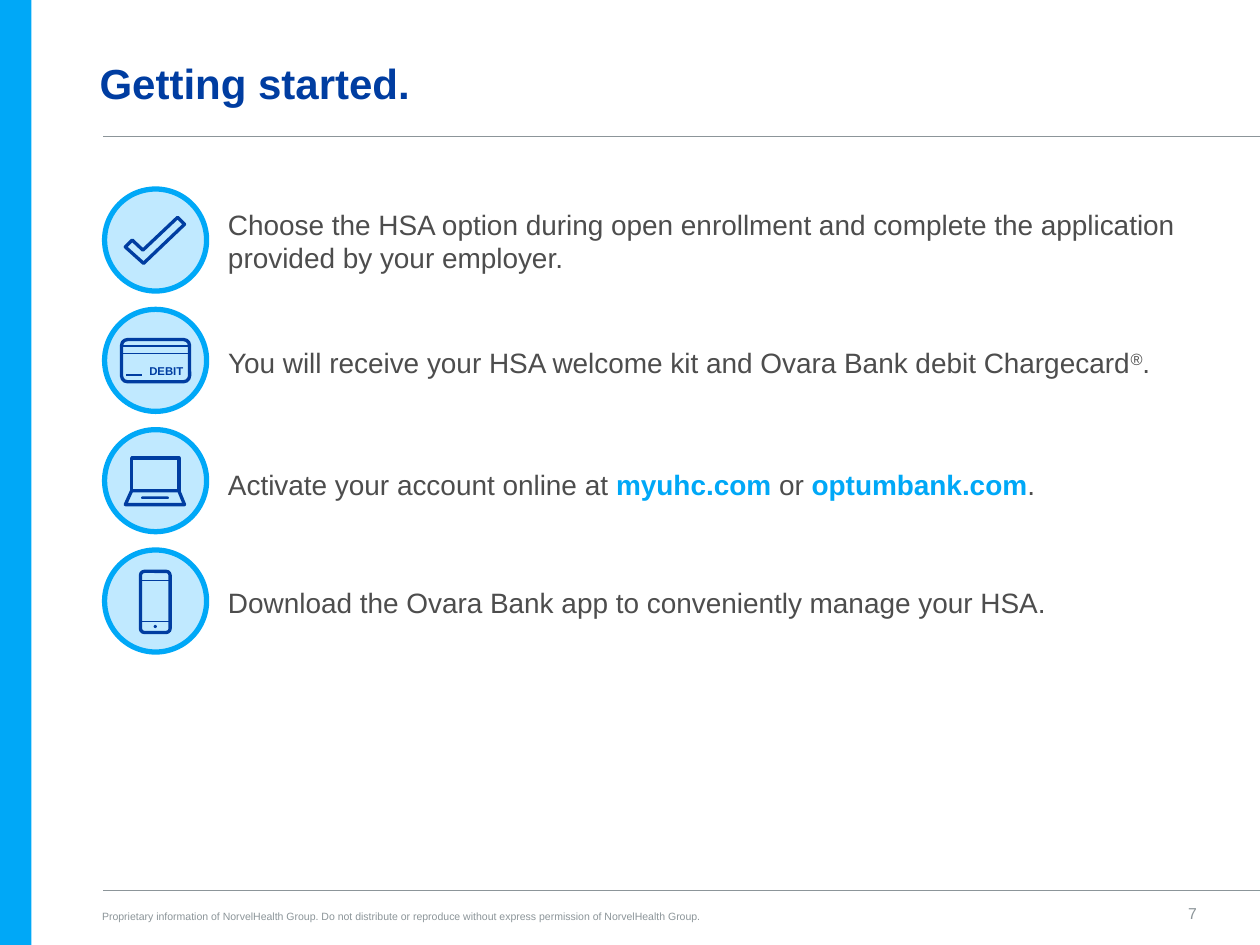
"""Build the slide on getting started with a health account."""
from dataclasses import dataclass
from typing import NamedTuple

from lxml.etree import SubElement
from pptx import Presentation
from pptx.dml.color import RGBColor
from pptx.enum.shapes import MSO_CONNECTOR, MSO_SHAPE
from pptx.enum.text import MSO_ANCHOR, MSO_AUTO_SIZE, PP_ALIGN
from pptx.oxml.ns import qn
from pptx.shapes.autoshape import Shape
from pptx.slide import Slide
from pptx.text.text import TextFrame, _Paragraph
from pptx.util import Emu, Pt

SCALE = 4572


@dataclass(frozen=True)
class Theme:
    """Colours, type sizes and line widths of the slide."""
    font: str = "Arial"
    sky: str = "00A8F7"
    pale: str = "C0E9FF"
    navy: str = "003DA1"
    ink: str = "4D4D4D"
    grey: str = "8C9599"
    head: float = 24
    body: float = 16
    page: float = 9
    note: float = 6
    card: float = 6.5
    ring: float = 3
    rule: float = 0.5
    thin: float = 0.8
    thick: float = 1.9


class Box(NamedTuple):
    """A place and size in px."""
    left: int
    top: int
    wide: int
    high: int


class Bit(NamedTuple):
    """A run of text with its look."""
    text: str
    color: str
    bold: bool = False
    raised: bool = False


class Step(NamedTuple):
    """One step of the list with the box of its text."""
    box: Box
    bits: list[Bit]


class Form(NamedTuple):
    """A preset shape within an icon."""
    kind: MSO_SHAPE
    box: Box
    filled: bool = False
    bend: float | None = None


class Line(NamedTuple):
    """A level line."""
    left: int
    right: int
    top: int


LOOK = Theme()
STEPS = [
    Step(Box(362, 318, 1588, 128), [
        Bit("Choose the HSA option during open enrollment and complete the "
            "application provided by your employer.", LOOK.ink)]),
    Step(Box(362, 506, 1538, 138), [
        Bit("You will receive your HSA welcome kit and Ovara Bank debit Chargecard", LOOK.ink),
        Bit("®", LOOK.ink, raised=True),
        Bit(".", LOOK.ink)]),
    Step(Box(362, 706, 1588, 124), [
        Bit("Activate your account online at ", LOOK.ink),
        Bit("myuhc.com ", LOOK.sky, True),
        Bit("or ", LOOK.ink),
        Bit("optumbank.com", LOOK.sky, True),
        Bit(".", LOOK.ink)]),
    Step(Box(362, 894, 1588, 124), [
        Bit("Download the Ovara Bank app to conveniently manage your HSA.", LOOK.ink)]),
]
TICK = [(199, 392), (210, 381), (227, 397), (282, 345), (293, 356), (228, 418)]
BASE = [(209, 779), (284, 779), (293, 801), (199, 801)]
FORMS = [
    Form(MSO_SHAPE.ROUNDED_RECTANGLE, Box(193, 539, 108, 67), bend=0.14),
    Form(MSO_SHAPE.RECTANGLE, Box(209, 727, 75, 52)),
    Form(MSO_SHAPE.ROUNDED_RECTANGLE, Box(224, 788, 44, 4), True, 0.5),
    Form(MSO_SHAPE.ROUNDED_RECTANGLE, Box(223, 907, 47, 97), bend=0.13),
    Form(MSO_SHAPE.OVAL, Box(244, 992, 5, 5), True),
]
STRIPES = [Line(193, 301, 549), Line(193, 301, 561), Line(200, 226, 595),
           Line(223, 270, 921), Line(223, 270, 987)]
RULES = [Line(164, 2000, 216), Line(164, 2000, 1414)]


def px(count: int) -> Emu:
    """Turn px into EMU."""
    return Emu(count * SCALE)


def paint(shape: Shape, fill: str | None, edge: str | None, width: float = 0) -> None:
    """Set the fill and the edge of a shape."""
    shape.shadow.inherit = False
    if fill:
        shape.fill.solid()
        shape.fill.fore_color.rgb = RGBColor.from_string(fill)
    else:
        shape.fill.background()
    if edge:
        shape.line.color.rgb = RGBColor.from_string(edge)
        shape.line.width = Pt(width)
    else:
        shape.line.fill.background()


def draw(slide: Slide, kind: MSO_SHAPE, box: Box, fill: str | None,
         edge: str | None = None, width: float = 0) -> Shape:
    """Add a painted preset shape."""
    shape = slide.shapes.add_shape(kind, *map(px, box))
    paint(shape, fill, edge, width)
    return shape


def trace(slide: Slide, points: list[tuple[int, int]]) -> None:
    """Add a closed icon outline through the points."""
    pen = slide.shapes.build_freeform(*points[0], scale=SCALE)
    pen.add_line_segments(points[1:], close=True)
    paint(pen.convert_to_shape(), None, LOOK.navy, LOOK.thick)


def rule(slide: Slide, line: Line, color: str, width: float) -> None:
    """Add a level line."""
    link = slide.shapes.add_connector(
        MSO_CONNECTOR.STRAIGHT, px(line.left), px(line.top), px(line.right), px(line.top))
    link.line.color.rgb = RGBColor.from_string(color)
    link.line.width = Pt(width)
    SubElement(link._element.spPr, qn("a:effectLst"))


def write(para: _Paragraph, bits: list[Bit], size: float) -> None:
    """Add the runs to a paragraph."""
    for bit in bits:
        run = para.add_run()
        run.text = bit.text
        run.font.name, run.font.size, run.font.bold = LOOK.font, Pt(size), bit.bold
        run.font.color.rgb = RGBColor.from_string(bit.color)
        if bit.raised:
            run._r.get_or_add_rPr().set("baseline", "30000")


def label(slide: Slide, box: Box, bits: list[Bit], size: float,
          anchor: MSO_ANCHOR = MSO_ANCHOR.BOTTOM, align: PP_ALIGN = PP_ALIGN.LEFT) -> TextFrame:
    """Add a text box without margins."""
    frame = slide.shapes.add_textbox(*map(px, box)).text_frame
    frame.word_wrap, frame.vertical_anchor = True, anchor
    frame.margin_left = frame.margin_right = frame.margin_top = frame.margin_bottom = 0
    frame.paragraphs[0].alignment = align
    write(frame.paragraphs[0], bits, size)
    return frame


def head(slide: Slide) -> None:
    """Fill and place the title."""
    title = slide.shapes.title
    title.left, title.top, title.width, title.height = map(px, Box(138, 50, 1300, 172))
    frame = title.text_frame
    frame.auto_size, frame.vertical_anchor = MSO_AUTO_SIZE.NONE, MSO_ANCHOR.MIDDLE
    para = frame.paragraphs[0]
    para.alignment, para.line_spacing = PP_ALIGN.LEFT, 0.9
    write(para, [Bit("Getting started.", LOOK.navy, True)], LOOK.head)


def icons(slide: Slide) -> None:
    """Draw the signs inside the rings."""
    for points in (TICK, BASE):
        trace(slide, points)
    for form in FORMS:
        fill, edge = (LOOK.navy, None) if form.filled else (None, LOOK.navy)
        shape = draw(slide, form.kind, form.box, fill, edge, LOOK.thick)
        if form.bend is not None:
            shape.adjustments[0] = form.bend
    for line in STRIPES:
        rule(slide, line, LOOK.navy, LOOK.thin)
    label(slide, Box(237, 579, 62, 21), [Bit("DEBIT", LOOK.navy, True)], LOOK.card)


def main() -> None:
    """Build and save the slide."""
    deck = Presentation()
    deck.slide_width, deck.slide_height = px(2000), px(1500)
    slide = deck.slides.add_slide(deck.slide_layouts[5])
    draw(slide, MSO_SHAPE.RECTANGLE, Box(0, 0, 50, 1500), LOOK.sky)
    for line in RULES:
        rule(slide, line, LOOK.grey, LOOK.rule)
    head(slide)
    for row, step in enumerate(STEPS):
        draw(slide, MSO_SHAPE.OVAL, Box(166, 300 + 191 * row, 162, 162),
             LOOK.pale, LOOK.sky, LOOK.ring)
        frame = label(slide, step.box, step.bits, LOOK.body, MSO_ANCHOR.MIDDLE)
        frame.margin_top = frame.margin_bottom = px(10)
        frame.margin_right = px(20)
    icons(slide)
    note = ("Proprietary information of NorvelHealth Group. Do not distribute or "
            "reproduce without express permission of NorvelHealth Group.")
    label(slide, Box(162, 1444, 1278, 20), [Bit(note, LOOK.grey)], LOOK.note)
    label(slide, Box(1666, 1428, 234, 36), [Bit("7", LOOK.grey)], LOOK.page, align=PP_ALIGN.RIGHT)
    deck.save("out.pptx")


if __name__ == "__main__":
    main()
